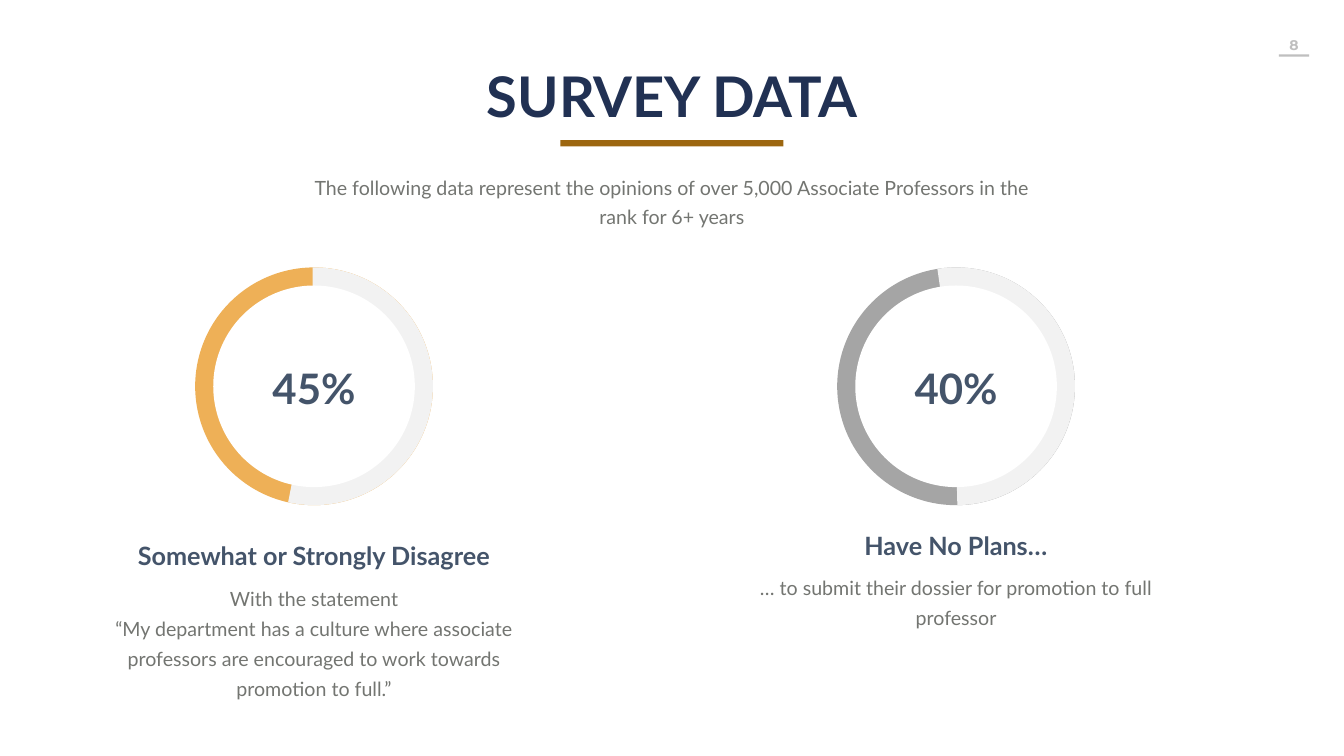
import pptx
import pptx.dml.color
import pptx.enum.shapes
import pptx.enum.text
import pptx.util

Cm = pptx.util.Cm
Pt = pptx.util.Pt
SHAPE = pptx.enum.shapes.MSO_SHAPE

NAVY, SLATE, GREY = "213153", "44546A", "737571"
PALE, SILVER, WHITE = "F2F2F2", "BFBFBF", "FFFFFF"
PANEL_WIDTH = 10.57


def rgb(hex_colour):
    return pptx.dml.color.RGBColor.from_string(hex_colour)


def format_text(shape, text, size, colour, bold=False, font="Lato", spacing=None, wrap=True):
    frame = shape.text_frame
    frame.text = text
    frame.word_wrap = wrap
    frame.auto_size = pptx.enum.text.MSO_AUTO_SIZE.NONE
    frame.vertical_anchor = pptx.enum.text.MSO_ANCHOR.TOP
    for paragraph in frame.paragraphs:
        paragraph.alignment = pptx.enum.text.PP_ALIGN.CENTER
        if spacing:
            paragraph.line_spacing = Pt(spacing)
        for run in paragraph.runs:
            run.font.name = font
            run.font.size = Pt(size)
            run.font.bold = bold
            run.font.color.rgb = rgb(colour)


def add_text(slide, left, top, width, height, text, size, colour, **style):
    box = slide.shapes.add_textbox(Cm(left), Cm(top), Cm(width), Cm(height))
    format_text(box, text, size, colour, **style)


def add_plain_shape(slide, kind, left, top, width, height, fill=None, line=None):
    shape = slide.shapes.add_shape(kind, Cm(left), Cm(top), Cm(width), Cm(height))
    shape.shadow.inherit = False
    if fill:
        shape.fill.solid()
        shape.fill.fore_color.rgb = rgb(fill)
    else:
        shape.fill.background()
    if line:
        shape.line.color.rgb = rgb(line)
        shape.line.width = Pt(25)
    else:
        shape.line.fill.background()
    return shape


def add_page_number(slide, left, top):
    add_text(slide, left, top, 1.22, 0.69, "8", 10, SILVER,
             bold=True, font="Montserrat", wrap=False)
    add_plain_shape(slide, SHAPE.RECTANGLE, left + 0.23, top + 0.58, 0.76, 0.06, SILVER)


def add_header(slide, left, top, width):
    centre = left + width / 2
    # Title
    title = slide.shapes.title
    title.left, title.top = Cm(centre - 5.4), Cm(top)
    title.width, title.height = Cm(10.8), Cm(1.96)
    format_text(title, "SURVEY DATA", 40, NAVY, bold=True)
    # Accent bar and introduction
    add_plain_shape(slide, SHAPE.RECTANGLE, centre - 2.81, top + 2.11, 5.62, 0.16, "9C660F")
    add_text(slide, left, top + 2.77, width, 1.63,
             "The following data represent the opinions of over 5,000 Associate "
             "Professors in the rank for 6+ years",
             14, GREY, spacing=20.4)


def add_ring(slide, centre, top, colour, arc_degrees):
    diameter, disc = 5.11, 5.08
    left = centre - diameter / 2
    add_plain_shape(slide, SHAPE.OVAL, left, top, diameter, diameter, WHITE, colour)
    arc = add_plain_shape(slide, SHAPE.ARC, left, top, diameter, diameter, line=PALE)
    for index, degrees in enumerate(arc_degrees):
        arc.adjustments[index] = degrees * 0.6  # 60000 units per degree, over 100000
    inset = (diameter - disc) / 2
    add_plain_shape(slide, SHAPE.OVAL, left + inset, top + inset, disc, disc, WHITE)


def add_panel(slide, left, top, colour, arc_degrees, percent, text_top, heading, body):
    centre = left + PANEL_WIDTH / 2
    # Ring with its value
    add_ring(slide, centre, top, colour, arc_degrees)
    add_text(slide, centre - 1.31, top + 1.84, 2.62, 1.55, percent, 30, SLATE,
             bold=True, wrap=False)
    # Heading and explanation
    add_text(slide, left + 0.29, text_top, 9.98, 1.02, heading, 18, SLATE, bold=True)
    add_text(slide, left, text_top + 1, PANEL_WIDTH, 3.3, body, 14, GREY, spacing=21.5)


def main():
    presentation = pptx.Presentation()
    presentation.slide_width = Cm(33.87)
    presentation.slide_height = Cm(19.05)
    slide = presentation.slides.add_slide(presentation.slide_layouts[5])

    add_page_number(slide, 32, 0.79)
    add_header(slide, 7.23, 1.42, 19.41)
    add_panel(slide, 2.63, 7.18, "EEB057", (269.26, 102.84), "45%", 13.49,
              "Somewhat or Strongly Disagree",
              "With the statement\n“My department has a culture where associate "
              "professors are encouraged to work towards promotion to full.”")
    add_panel(slide, 18.81, 7.18, "A5A5A5", (260.8, 89.52), "40%", 13.23,
              "Have No Plans…",
              "… to submit their dossier for promotion to full professor")

    presentation.save("out.pptx")


if __name__ == "__main__":
    main()
